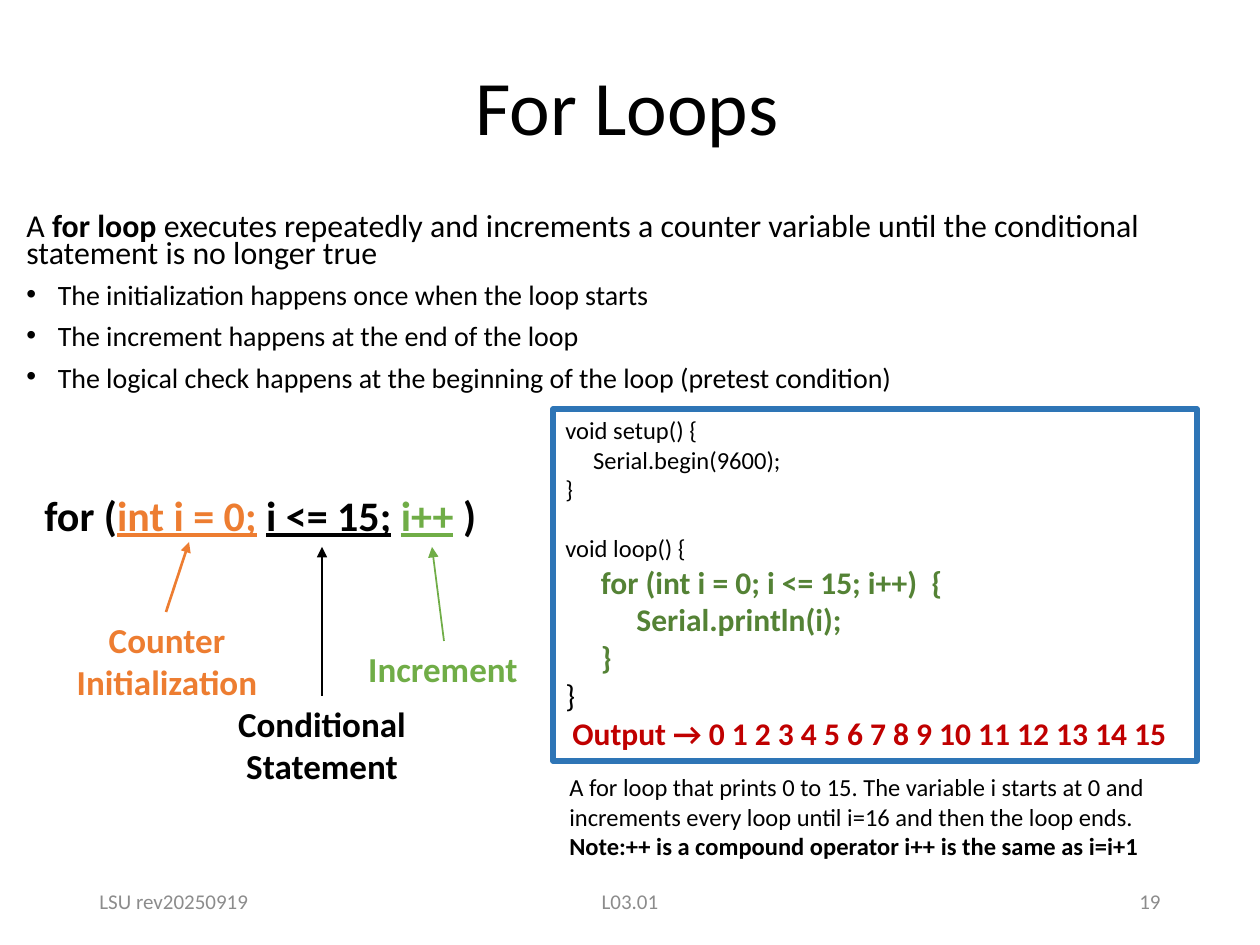
from lxml.etree import SubElement
from pptx import Presentation
from pptx.dml.color import RGBColor
from pptx.enum.shapes import MSO_CONNECTOR, MSO_SHAPE
from pptx.enum.text import MSO_ANCHOR, PP_ALIGN
from pptx.oxml.ns import qn
from pptx.util import Emu, Pt

PX = 914400 / 126
BLACK, ORANGE, LIME = "000000", "ED7D31", "70AD47"
GREEN, RED, BLUE, GRAY = "548235", "C00000", "2E75B6", "8C8C8C"
LEFT, MID, RIGHT = PP_ALIGN.LEFT, PP_ALIGN.CENTER, PP_ALIGN.RIGHT
hue = RGBColor.from_string


def px(*vals):
    return [Emu(round(v * PX)) for v in vals]


def write(shape, lines, size, color=BLACK, align=LEFT, wrap=True,
          anchor=MSO_ANCHOR.TOP, **base):
    """Each line is a list of (text, format) runs."""
    frame = shape.text_frame
    frame.word_wrap = wrap
    frame.vertical_anchor = anchor
    for n, line in enumerate(lines):
        para = frame.paragraphs[0] if n == 0 else frame.add_paragraph()
        para.alignment = align
        for words, extra in line:
            run = para.add_run()
            run.text = words
            look = {"name": "Calibri", "size": size, "color": color, **base, **extra}
            run.font.color.rgb = hue(look.pop("color"))
            look["size"] = Pt(look["size"])
            for key, val in look.items():
                setattr(run.font, key, val)
    return frame.paragraphs


deck = Presentation()
deck.slide_width, deck.slide_height = px(1260, 945)
slide = deck.slides.add_slide(deck.slide_layouts[5])
shapes = slide.shapes

# Title
title = shapes.title
title.left, title.top, title.width, title.height = px(222, 19, 810, 183)
head = write(title, [[("For Loops", {})]], 44, align=MID, anchor=MSO_ANCHOR.MIDDLE)
head[0].line_spacing = 0.9

# Definition and bullets
facts = [
    "The initialization happens once when the loop starts",
    "The increment happens at the end of the loop",
    "The logical check happens at the beginning of the loop (pretest condition)",
]
intro = [
    ("A ", {}),
    ("for loop ", {"bold": True}),
    ("executes repeatedly and increments a counter variable until the "
     "conditional statement is no longer true", {}),
]
body = shapes.add_textbox(*px(14, 210, 1236, 194))
paras = write(body, [intro] + [[(fact, {"size": 16})] for fact in facts], 18.2)
for n, para in enumerate(paras):
    para.line_spacing = 0.7
    if n:
        para.space_before = Pt(10)
        props = para._p.get_or_add_pPr()
        props.set("marL", "228600")
        props.set("indent", "-228600")
        SubElement(props, qn("a:buFont"), typeface="Arial")
        SubElement(props, qn("a:buChar"), char="•")

# Code panel
small, loud = {"size": 14}, {"color": GREEN, "bold": True}
code = [
    ("void setup() {", small),
    ("     Serial.begin(9600);", small),
    ("}", small),
    ("void loop() {", small),
    ("     for (int i = 0; i <= 15; i++)  {", loud),
    ("          Serial.println(i);", loud),
    ("     }", loud),
    ("}", {}),
    ("Output → 0 1 2 3 4 5 6 7 8 9 10 11 12 13 14 15", {"color": RED, "bold": True}),
]
panel = shapes.add_shape(MSO_SHAPE.RECTANGLE, *px(553, 409, 644, 352))
panel.shadow.inherit = False
panel.fill.background()
panel.line.color.rgb = hue(BLUE)
panel.line.width = Pt(3)
paras = write(panel, [[line] for line in code], 18)
paras[3].space_before = Pt(17)
paras[-1]._p.get_or_add_pPr().set("marL", str(px(7)[0]))

# Explanation under the panel
note = shapes.add_textbox(*px(557, 766, 640, 102))
write(note, [
    [("A for loop that prints 0 to 15. The variable i starts at 0 and increments "
      "every loop until i=16 and then the loop ends.", {})],
    [("Note:++ is a compound operator i++ is the same as i=i+1", {"bold": True})],
], 14)

# Loop header with its parts underlined
parts = [
    ("for (", {}),
    ("int i = 0;", {"color": ORANGE, "underline": True}),
    (" ", {}),
    ("i <= 15;", {"underline": True}),
    (" ", {}),
    ("i++", {"color": LIME, "underline": True}),
    (" ", {}),
    (")", {}),
]
write(shapes.add_textbox(*px(32, 483, 504, 63)), [parts], 24, bold=True)

# Part labels, each with an arrow up to its part
labels = [
    (["Counter", "Initialization"], ORANGE, (63, 612, 208, 97), (166, 612, 189, 542), 1.5),
    (["Conditional", "Statement"], BLACK, (225, 696, 194, 97), (322, 696, 322, 547), 1.5),
    (["Increment"], LIME, (355, 641, 176, 55), (444, 641, 432, 547), 1),
]
for words, color, place, ends, width in labels:
    label = shapes.add_textbox(*px(*place))
    write(label, [[(word, {})] for word in words], 20, color, MID, False, bold=True)
    arrow = shapes.add_connector(MSO_CONNECTOR.STRAIGHT, *px(*ends))
    arrow.line.color.rgb = hue(color)
    arrow.line.width = Pt(width)
    SubElement(arrow.line._get_or_add_ln(), qn("a:tailEnd"), type="triangle")
    SubElement(arrow._element.spPr, qn("a:effectLst"))

# Footer
for words, left, width, align in [
    ("LSU rev20250919", 87, 284, LEFT),
    ("L03.01", 417, 426, MID),
    ("19", 890, 283, RIGHT),
]:
    foot = shapes.add_textbox(*px(left, 876, width, 50))
    write(foot, [[(words, {})]], 12, GRAY, align, anchor=MSO_ANCHOR.MIDDLE)

deck.save("out.pptx")
